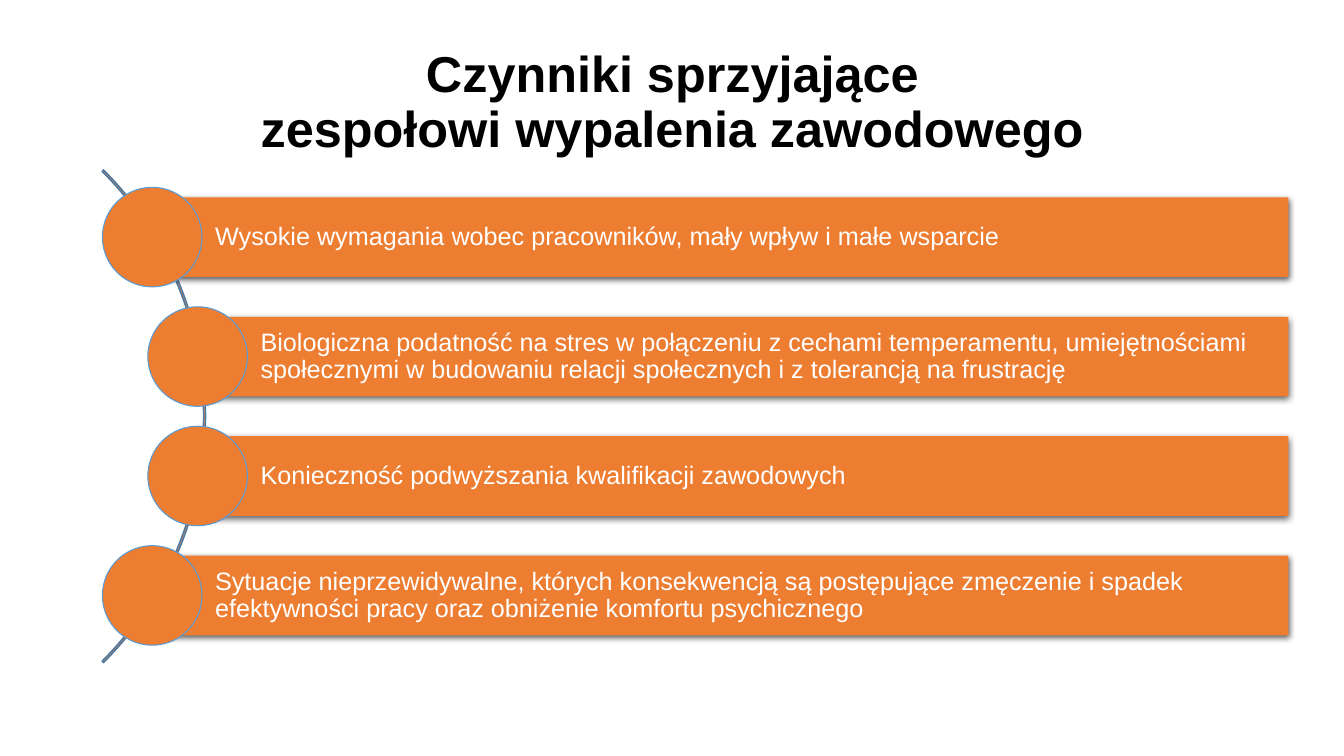
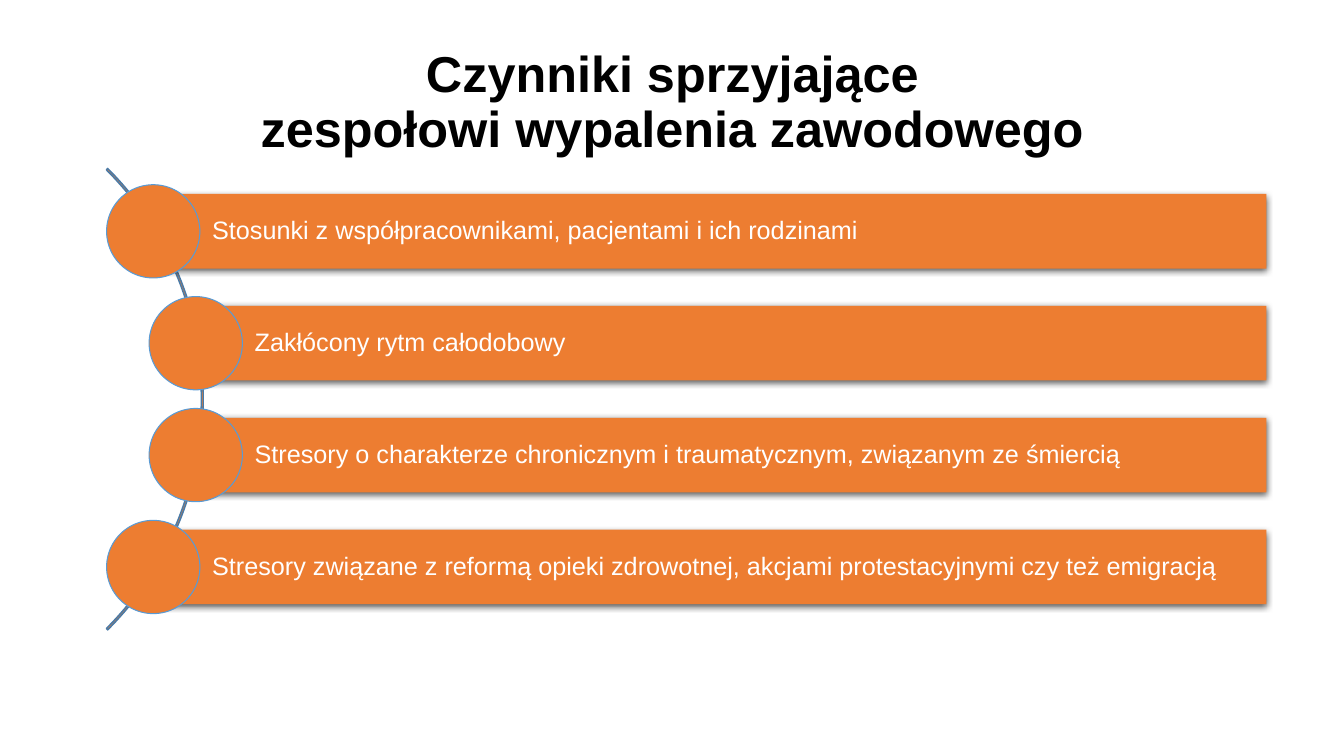
from dataclasses import dataclass

from lxml import etree
from pptx import Presentation
from pptx.dml.color import RGBColor
from pptx.enum.shapes import MSO_SHAPE as Preset
from pptx.enum.text import MSO_ANCHOR as Anchor, MSO_AUTO_SIZE as AutoSize, PP_ALIGN as Align
from pptx.oxml.ns import qn
from pptx.util import Inches, Pt

TITLE_LINES = ("Czynniki sprzyjające", "zespołowi wypalenia zawodowego")

FACTOR_SLIDES = [
    {
        "bar_height": 0.79, "middle": 4.13, "left": 1.51, "right": 12.78,
        "factors": [
            "Wysokie wymagania wobec pracowników, mały wpływ i małe wsparcie",
            "Biologiczna podatność na stres w połączeniu z cechami temperamentu, "
            "umiejętnościami społecznymi w budowaniu relacji społecznych "
            "i z tolerancją na frustrację",
            "Konieczność podwyższania kwalifikacji zawodowych",
            "Sytuacje nieprzewidywalne, których konsekwencją są postępujące zmęczenie "
            "i spadek efektywności pracy oraz obniżenie komfortu psychicznego",
        ],
    },
    {
        "bar_height": 0.74, "middle": 3.96, "left": 1.52, "right": 12.56,
        "factors": [
            "Stosunki z współpracownikami, pacjentami i ich rodzinami",
            "Zakłócony rytm całodobowy",
            "Stresory o charakterze chronicznym i traumatycznym, związanym ze śmiercią",
            "Stresory związane z reformą opieki zdrowotnej, akcjami protestacyjnymi "
            "czy też emigracją",
        ],
    },
]


@dataclass(frozen=True)
class Theme:
    font: str = "Arial"
    title_size: int = 36
    factor_size: int = 18
    title_color: str = "000000"
    factor_color: str = "FFFFFF"
    fill: str = "ED7D31"
    arc_line: str = "487AA8"
    marker_line: str = "599BD5"
    shadow: str = "000000"
    line_spacing: float = 0.9


THEME = Theme()
TITLE_BOX = (0.92, 0.35, 11.5, 1.36)

PITCH = 1.5
MARKER = 1.25
ARC_DIAMETER = 8.75
ARC_REACH = 0.67
INDENT = 0.57
TEXT_INSET = 0.79
EDGE_INSET = 0.06


def write(frame, text, size, color, align, bold=False):
    frame.text = text
    paragraph = frame.paragraphs[0]
    paragraph.alignment = align
    paragraph.line_spacing = THEME.line_spacing
    font = paragraph.runs[0].font
    font.name, font.size, font.bold = THEME.font, Pt(size), bold
    font.color.rgb = RGBColor.from_string(color)


def add_part(slide, preset, box, line=None, width=1):
    part = slide.shapes.add_shape(preset, *map(Inches, box))
    part.shadow.inherit = False
    part.fill.solid()
    part.fill.fore_color.rgb = RGBColor.from_string(THEME.fill)
    if line:
        part.line.color.rgb = RGBColor.from_string(line)
        part.line.width = Pt(width)
    else:
        part.line.fill.background()
    return part


def drop_shadow(part):
    effects = part.element.spPr.find(qn("a:effectLst"))
    shadow = etree.SubElement(
        effects, qn("a:outerShdw"), blurRad=str(Pt(4.5)), dist=str(Pt(1.5)),
        dir="5400000", algn="ctr", rotWithShape="0")
    color = etree.SubElement(shadow, qn("a:srgbClr"), val=THEME.shadow)
    etree.SubElement(color, qn("a:alpha"), val="63000")


def add_arc(slide, bar_height, middle, left):
    diameter = ARC_DIAMETER * bar_height
    arc_left = left + ARC_REACH * bar_height - diameter
    arc = add_part(slide, Preset.BLOCK_ARC,
                   (arc_left, middle - diameter / 2, diameter, diameter), THEME.arc_line)
    for index, value in enumerate((189, 27, 0.003)):
        arc.adjustments[index] = value


def add_factor(slide, text, bar_height, center, left, right):
    bar = add_part(slide, Preset.RECTANGLE,
                   (left, center - bar_height / 2, right - left, bar_height))
    drop_shadow(bar)
    frame = bar.text_frame
    frame.word_wrap = True
    frame.vertical_anchor = Anchor.MIDDLE
    frame.margin_left = Inches(TEXT_INSET * bar_height)
    frame.margin_top = frame.margin_right = frame.margin_bottom = Inches(EDGE_INSET)
    write(frame, text, THEME.factor_size, THEME.factor_color, Align.LEFT)

    marker = MARKER * bar_height
    add_part(slide, Preset.OVAL, (left - marker / 2, center - marker / 2, marker, marker),
             THEME.marker_line, 0.75)


def add_factor_slide(deck, layout, bar_height, middle, left, right, factors):
    slide = deck.slides.add_slide(layout)
    title = " ".join(line.replace(" ", chr(160)) for line in TITLE_LINES)
    write(slide.shapes.title.text_frame, title, THEME.title_size, THEME.title_color,
          Align.CENTER, bold=True)
    add_arc(slide, bar_height, middle, left)
    last = len(factors) - 1
    for row, text in enumerate(factors):
        center = middle + (row - last / 2) * PITCH * bar_height
        indent = 0 if row in (0, last) else INDENT * bar_height
        add_factor(slide, text, bar_height, center, left + indent, right)


def set_title_style(layout):
    title = next(p for p in layout.placeholders if p.placeholder_format.idx == 0)
    title.left, title.top, title.width, title.height = map(Inches, TITLE_BOX)
    title.text_frame.vertical_anchor = Anchor.MIDDLE
    title.text_frame.auto_size = AutoSize.NONE


def main():
    deck = Presentation()
    deck.slide_width, deck.slide_height = Inches(13.33), Inches(7.5)
    layout = deck.slide_layouts.get_by_name("Title Only")
    set_title_style(layout)
    for content in FACTOR_SLIDES:
        add_factor_slide(deck, layout, **content)
    deck.save("out.pptx")


if __name__ == "__main__":
    main()
